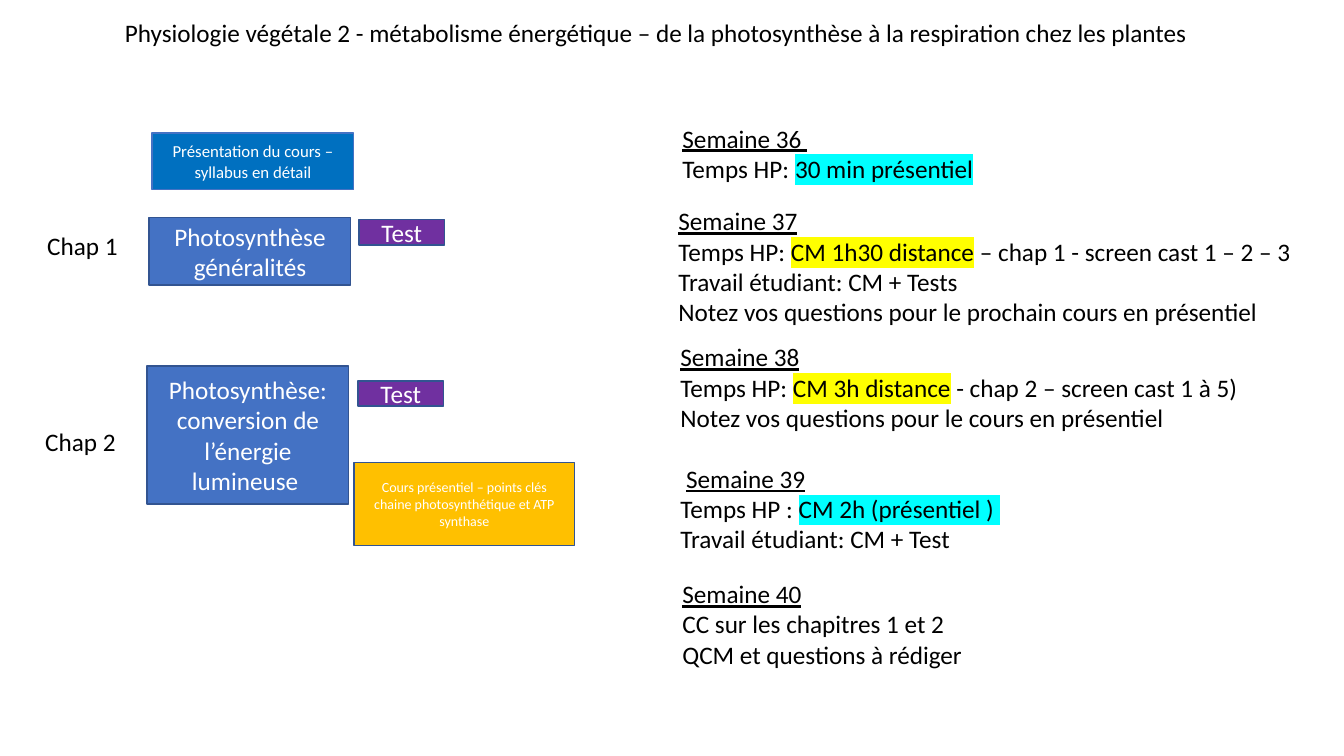
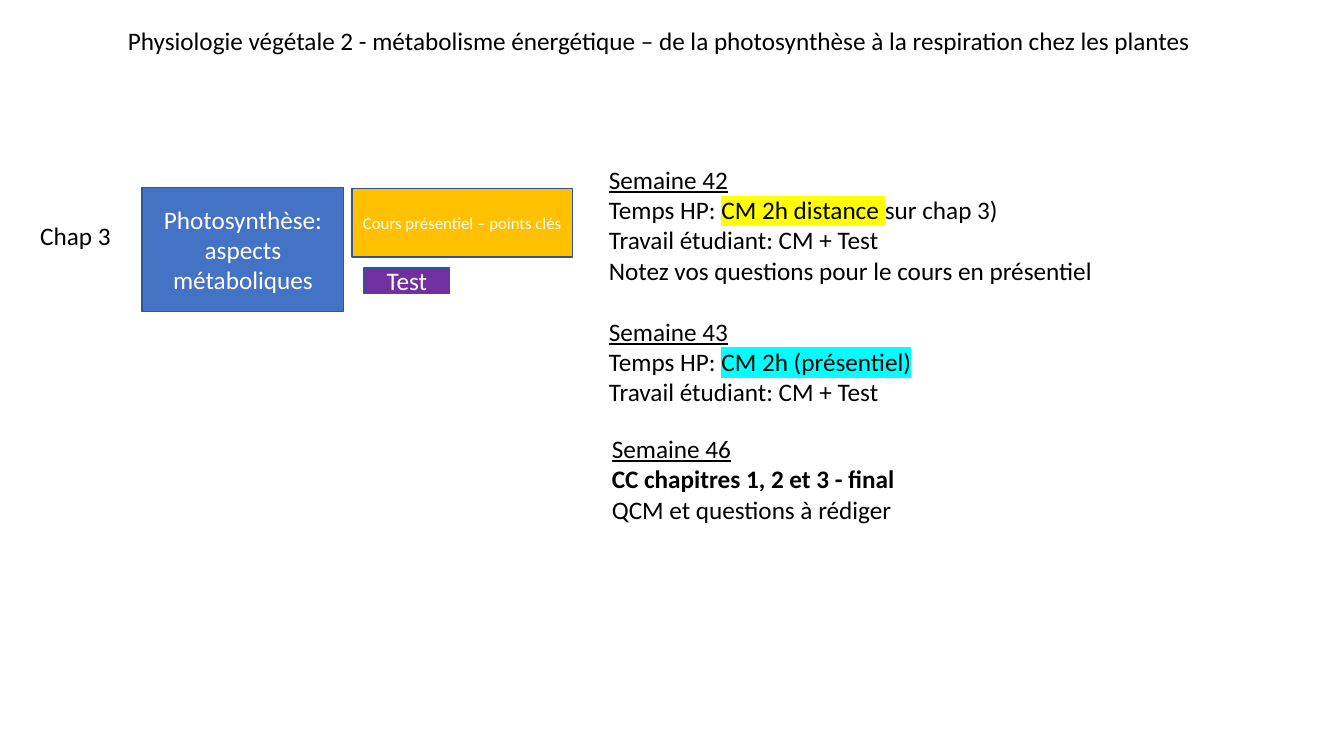
"""Build the two-slide course schedule for plant physiology."""
from dataclasses import dataclass, field
from typing import Any

from lxml.etree import SubElement
from pptx import Presentation
from pptx.dml.color import RGBColor
from pptx.enum.text import MSO_ANCHOR as Anchor, MSO_AUTO_SIZE as AutoSize, PP_ALIGN as Align
from pptx.enum.shapes import MSO_SHAPE as Preset
from pptx.oxml.ns import qn
from pptx.slide import Slide
from pptx.text.text import TextFrame
from pptx.util import Inches, Pt

BLACK = RGBColor(0x00, 0x00, 0x00)
WHITE = RGBColor(0xFF, 0xFF, 0xFF)
CHAPTER_BLUE = RGBColor(0x44, 0x72, 0xC4)
INTRO_BLUE = RGBColor(0x00, 0x70, 0xC0)
OUTLINE_BLUE = RGBColor(0x32, 0x54, 0x91)
TEST_PURPLE = RGBColor(0x70, 0x30, 0xA0)
CLASS_GOLD = RGBColor(0xFF, 0xC0, 0x00)
REMOTE_YELLOW = RGBColor(0xFF, 0xFF, 0x00)
ONSITE_CYAN = RGBColor(0x00, 0xFF, 0xFF)

FONT = "Calibri"
BODY_SIZE = 18
LINE_HEIGHT = 22
LABEL_HEIGHT = 0.4
COURSE_TITLE = (
    "Physiologie végétale 2 - métabolisme énergétique – "
    "de la photosynthèse à la respiration chez les plantes"
)


@dataclass(frozen=True)
class Span:
    """A piece of text with its own format."""
    text: str
    style: dict[str, Any] = field(default_factory=dict)
    highlight: RGBColor | None = None


@dataclass(frozen=True)
class Line:
    """A paragraph and the space above it in points."""
    spans: tuple[Span, ...]
    space_before: float = 0


@dataclass(frozen=True)
class BlockStyle:
    """The look shared by one sort of block."""
    fill: RGBColor
    width: float
    outline: RGBColor = OUTLINE_BLUE


@dataclass(frozen=True)
class Block:
    """A coloured course block."""
    style: BlockStyle
    left: float
    top: float
    height: float
    text: str
    size: float = BODY_SIZE


@dataclass(frozen=True)
class Note:
    """A text box with black text."""
    left: float
    top: float
    width: float
    height: float
    lines: tuple[Line, ...]
    wrap: bool = False


@dataclass(frozen=True)
class Plan:
    """The content of one slide."""
    blocks: tuple[Block, ...]
    notes: tuple[Note, ...]


CHAPTER = BlockStyle(CHAPTER_BLUE, 2)
INTRO = BlockStyle(INTRO_BLUE, 2, CHAPTER_BLUE)
ONSITE_CLASS = BlockStyle(CLASS_GOLD, 2.19)
TEST = BlockStyle(TEST_PURPLE, 0.85)


def plain(text: str, **style: Any) -> Line:
    """Return a line with a single span."""
    return Line((Span(text, style),))


def week(title: str, space_before: float = 0, lead: str = "") -> Line:
    """Return an underlined week heading."""
    heading = Span(title, {"underline": True})
    return Line((Span(lead), heading) if lead else (heading,), space_before)


def hours(marked: str, color: RGBColor, rest: str = "", label: str = "Temps HP: ") -> Line:
    """Return a teaching-time line with a highlighted part."""
    spans = (Span(label), Span(marked, highlight=color))
    return Line(spans + ((Span(rest),) if rest else ()))


def title(left: float, top: float) -> Note:
    """Return the course title."""
    return Note(left, top, 10.77, LABEL_HEIGHT, (plain(COURSE_TITLE),))


def chapter_label(number: int, left: float, top: float) -> Note:
    """Return the label beside a chapter."""
    return Note(left, top, 0.91, LABEL_HEIGHT, (plain(f"Chap {number}"),))


def test(left: float, top: float) -> Block:
    """Return a test block."""
    return Block(TEST, left, top, 0.25, "Test")


STUDENT_WORK = plain("Travail étudiant: CM + Test")
CLASS_QUESTIONS = plain("Notez vos questions pour le cours en présentiel")
EXAM_FORM = plain("QCM et questions à rédiger")

PLANS = (
    Plan(
        blocks=(
            Block(CHAPTER, 1.48, 2.16, 0.67, "Photosynthèse généralités"),
            Block(CHAPTER, 1.46, 3.63, 1.37,
                  "Photosynthèse: conversion de l’énergie lumineuse "),
            Block(ONSITE_CLASS, 3.51, 4.59, 0.82,
                  "Cours présentiel – points clés chaine photosynthétique et ATP synthase", 10),
            test(3.56, 2.18),
            test(3.55, 3.78),
            Block(INTRO, 1.51, 1.32, 0.56, "Présentation du cours – syllabus en détail", 12),
        ),
        notes=(
            title(1.14, 0.12),
            Note(6.67, 1.17, 3.12, 0.71, (
                week("Semaine 36 "),
                hours("30 min présentiel", ONSITE_CYAN),
            )),
            Note(6.63, 1.99, 6.41, 1.31, (
                week("Semaine 37"),
                hours("CM 1h30 distance", REMOTE_YELLOW, " – chap 1 - screen cast 1 – 2 – 3"),
                plain("Travail étudiant: CM + Tests"),
                plain("Notez vos questions pour le prochain cours en présentiel"),
            )),
            Note(6.65, 3.34, 6.16, 2.52, (
                week("Semaine 38"),
                hours("CM 3h distance", REMOTE_YELLOW, " - chap 2 – screen cast 1 à 5)"),
                CLASS_QUESTIONS,
                week("Semaine 39", LINE_HEIGHT, " "),
                hours("CM 2h (présentiel ) ", ONSITE_CYAN, label="Temps HP : "),
                STUDENT_WORK,
            ), wrap=True),
            Note(6.67, 5.69, 6.13, 1.01, (
                week("Semaine 40"),
                plain("CC sur les chapitres 1 et 2"),
                EXAM_FORM,
            ), wrap=True),
            chapter_label(1, 0.37, 2.24),
            chapter_label(2, 0.35, 4.18),
        ),
    ),
    Plan(
        blocks=(
            Block(CHAPTER, 1.41, 1.86, 1.23, "Photosynthèse: aspects métaboliques"),
            Block(ONSITE_CLASS, 3.49, 1.87, 0.68, "Cours présentiel – points clés", 12),
            test(3.61, 2.66),
        ),
        notes=(
            title(1.17, 0.2),
            Note(5.94, 1.58, 6.69, 2.52, (
                week("Semaine 42"),
                hours("CM 2h distance ", REMOTE_YELLOW, "sur chap 3)"),
                STUDENT_WORK,
                CLASS_QUESTIONS,
                week("Semaine 43", LINE_HEIGHT),
                hours("CM 2h (présentiel)", ONSITE_CYAN),
                STUDENT_WORK,
            ), wrap=True),
            Note(5.97, 4.25, 7.26, 1.01, (
                week("Semaine 46"),
                plain("CC chapitres 1, 2 et 3 - final", bold=True),
                EXAM_FORM,
            ), wrap=True),
            chapter_label(3, 0.3, 2.14),
        ),
    ),
)


def write_lines(frame: TextFrame, lines: tuple[Line, ...], color: RGBColor,
                size: float = BODY_SIZE, align: Align = Align.LEFT) -> None:
    """Fill a text frame with formatted lines."""
    for index, line in enumerate(lines):
        paragraph = frame.paragraphs[0] if index == 0 else frame.add_paragraph()
        paragraph.alignment = align
        paragraph.space_before = Pt(line.space_before)
        for span in line.spans:
            run = paragraph.add_run()
            run.text = span.text
            for name, value in {"name": FONT, "size": Pt(size), **span.style}.items():
                setattr(run.font, name, value)
            run.font.color.rgb = color
            if span.highlight is not None:
                properties = run.font._element if hasattr(run.font, "_element") else run._r.get_or_add_rPr()
                marker = SubElement(properties, qn("a:highlight"))
                SubElement(marker, qn("a:srgbClr"), val=str(span.highlight))
                properties.find(qn("a:solidFill")).addnext(marker)


def draw_block(slide: Slide, block: Block) -> None:
    """Draw a coloured block with centred white text."""
    style = block.style
    rectangle = slide.shapes.add_shape(
        Preset.RECTANGLE, Inches(block.left), Inches(block.top),
        Inches(style.width), Inches(block.height))
    rectangle.shadow.inherit = False
    rectangle.fill.solid()
    rectangle.fill.fore_color.rgb = style.fill
    rectangle.line.color.rgb = style.outline
    rectangle.line.width = Pt(1)
    frame = rectangle.text_frame
    for name, value in {"word_wrap": True, "vertical_anchor": Anchor.MIDDLE}.items():
        setattr(frame, name, value)
    write_lines(frame, (plain(block.text),), WHITE, block.size, Align.CENTER)


def draw_note(slide: Slide, note: Note) -> None:
    """Draw a text box that grows with its text."""
    frame = slide.shapes.add_textbox(
        Inches(note.left), Inches(note.top), Inches(note.width), Inches(note.height)).text_frame
    for name, value in {"word_wrap": note.wrap, "auto_size": AutoSize.SHAPE_TO_FIT_TEXT}.items():
        setattr(frame, name, value)
    write_lines(frame, note.lines, BLACK)


def main() -> None:
    """Build and save the presentation."""
    deck = Presentation()
    deck.slide_width, deck.slide_height = Inches(13.33), Inches(7.5)
    for plan in PLANS:
        slide = deck.slides.add_slide(deck.slide_layouts[6])
        for block in plan.blocks:
            draw_block(slide, block)
        for note in plan.notes:
            draw_note(slide, note)
    deck.save("out.pptx")


if __name__ == "__main__":
    main()
